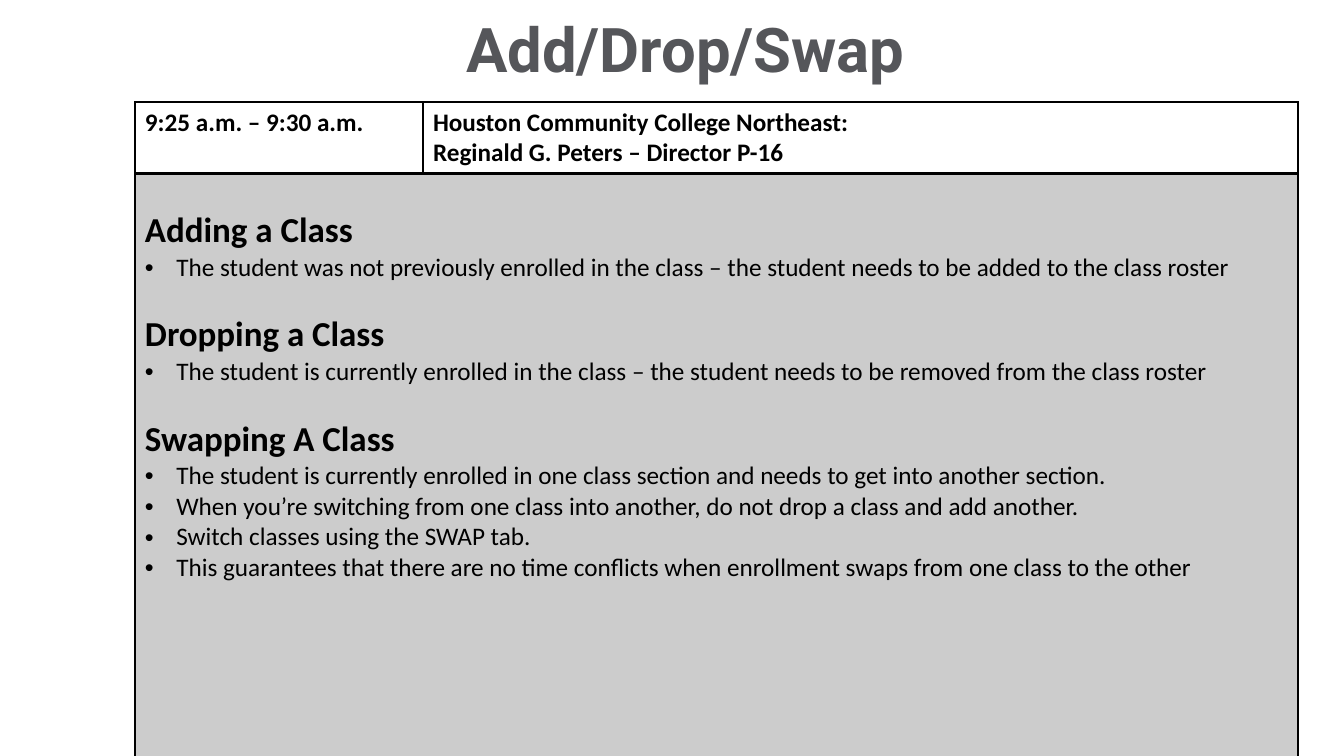
from pptx import Presentation
from pptx import util as u
from pptx.dml.color import RGBColor
from pptx.enum import text
from pptx.oxml import parse_xml
from pptx.oxml.ns import nsdecls

SESSION = ("9:25 a.m. – 9:30 a.m.",
           ["Houston Community College Northeast:", "Reginald G. Peters – Director P-16"])
TOPICS = {
    "Adding a Class": [
        "The student was not previously enrolled in the class – "
        "the student needs to be added to the class roster"],
    "Dropping a Class": [
        "The student is currently enrolled in the class – "
        "the student needs to be removed from the class roster"],
    "Swapping A Class": [
        "The student is currently enrolled in one class section and needs to get into another section.",
        "When you’re switching from one class into another, do not drop a class and add another.",
        "Switch classes using the SWAP tab.",
        "This guarantees that there are no time conflicts when enrollment swaps "
        "from one class to the other"],
}


def color(value):
    return RGBColor.from_string(value)


def write(frame, content, font="Calibri", size=18, bold=False, ink="000000",
          align=None, line=None, before=0, bullet=False):
    """Add one formatted paragraph, filling the first one while it is empty."""
    paragraph = frame.paragraphs[0]
    if paragraph.runs:
        paragraph = frame.add_paragraph()
    if align is not None:
        paragraph.alignment = align
    if line:
        paragraph.line_spacing = line
    if before:
        paragraph.space_before = u.Pt(before)
    if bullet:
        properties = paragraph._p.get_or_add_pPr()
        properties.set("marL", str(u.Cm(0.79)))
        properties.set("indent", str(u.Cm(-0.79)))
        for tag in ('a:buFont {} typeface="Arial"', 'a:buChar {} char="•"'):
            properties.append(parse_xml(f"<{tag.format(nsdecls('a'))}/>"))
    run = paragraph.add_run()
    run.text = content
    run.font.name, run.font.size, run.font.bold = font, u.Pt(size), bold
    run.font.color.rgb = color(ink)


class SlideBuilder:
    heading_ink = "55565A"
    border_ink = "000000"

    def __init__(self, presentation):
        self.slide = presentation.slides.add_slide(presentation.slide_layouts[5])

    def title(self, content, left, top, width, height):
        shape = self.slide.shapes.title
        shape.left, shape.top, shape.width, shape.height = map(u.Cm, (left, top, width, height))
        shape.text_frame.word_wrap = True
        shape.text_frame.vertical_anchor = text.MSO_ANCHOR.MIDDLE
        write(shape.text_frame, content, font="Roboto", size=44, bold=True,
              ink=self.heading_ink, align=text.PP_ALIGN.CENTER, line=0.9)

    def table(self, left, top, columns, rows):
        table = self.slide.shapes.add_table(
            len(rows), len(columns), u.Cm(left), u.Cm(top),
            u.Cm(sum(columns)), u.Cm(sum(rows))).table
        table.first_row = table.horz_banding = False
        for column, width in zip(table.columns, columns):
            column.width = u.Cm(width)
        for row, height in zip(table.rows, rows):
            row.height = u.Cm(height)
        return table

    def style_cell(self, cell, fill, bottom=1):
        # Borders precede the fill in the cell properties
        properties = cell._tc.get_or_add_tcPr()
        for side, width in zip("LRTB", (1, 1, 1, bottom)):
            properties.append(parse_xml(
                f'<a:ln{side} {nsdecls("a")} w="{u.Pt(width)}"><a:solidFill>'
                f'<a:srgbClr val="{self.border_ink}"/></a:solidFill></a:ln{side}>'))
        cell.fill.solid()
        cell.fill.fore_color.rgb = color(fill)


def main():
    presentation = Presentation()
    presentation.slide_width, presentation.slide_height = u.Cm(33.87), u.Cm(19.05)
    builder = SlideBuilder(presentation)
    builder.title("Add/Drop/Swap", 3.02, 0, 28.52, 2.67)

    # Table frame
    agenda = builder.table(3.4, 2.57, columns=[7.26, 22.05], rows=[1.8, 17.12])
    for column in range(2):
        builder.style_cell(agenda.cell(0, column), "FFFFFF", bottom=2)
        builder.style_cell(agenda.cell(1, column), "CCCCCC")
    agenda.cell(1, 0).merge(agenda.cell(1, 1))

    # Session row
    time, speakers = SESSION
    write(agenda.cell(0, 0).text_frame, time, bold=True)
    for speaker in speakers:
        write(agenda.cell(0, 1).text_frame, speaker, bold=True)

    # Topics row
    topics = agenda.cell(1, 0)
    topics.margin_top = u.Cm(0.9)
    for index, (heading, points) in enumerate(TOPICS.items()):
        write(topics.text_frame, heading, size=25, bold=True, before=22 if index else 0)
        for point in points:
            write(topics.text_frame, point, bullet=True)

    presentation.save("out.pptx")


if __name__ == "__main__":
    main()
